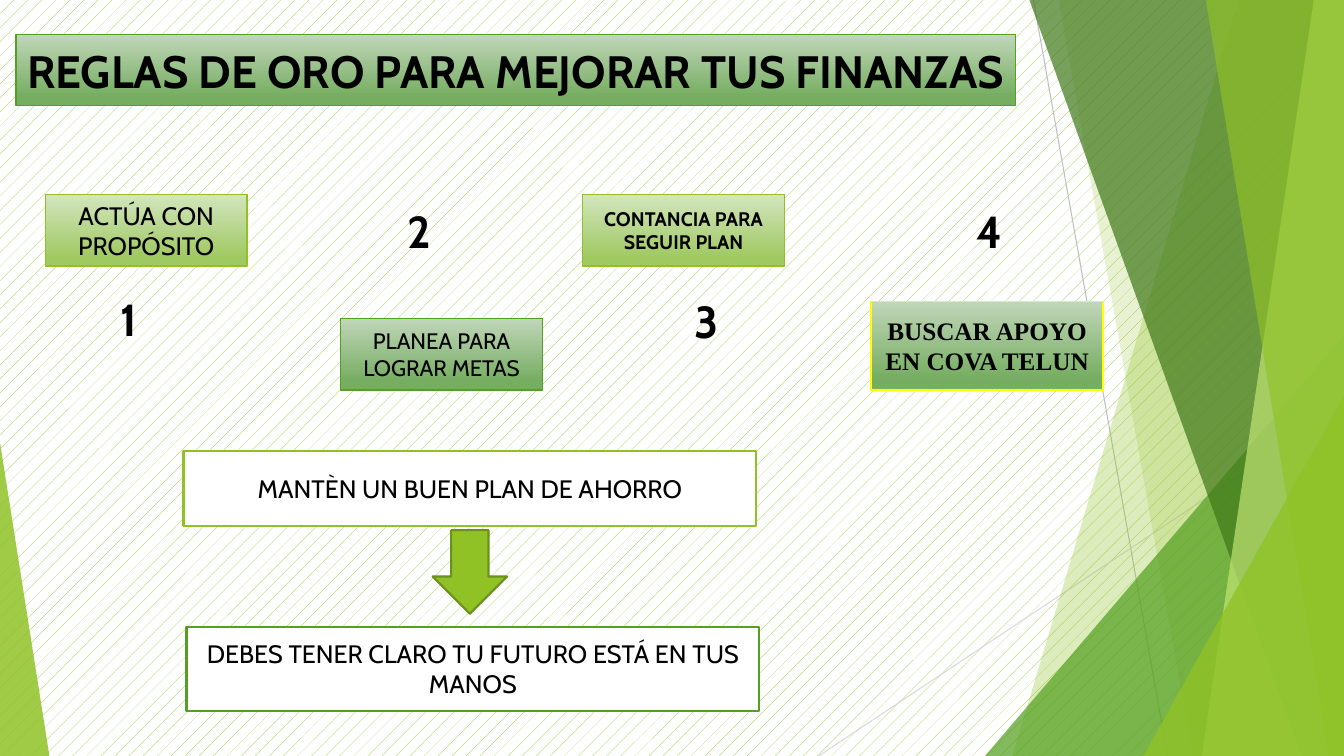
from dataclasses import dataclass

from lxml.etree import SubElement
from pptx import Presentation
from pptx.dml.color import RGBColor
from pptx.enum.dml import MSO_PATTERN
from pptx.enum.shapes import MSO_CONNECTOR, MSO_SHAPE
from pptx.enum.text import MSO_ANCHOR, PP_ALIGN
from pptx.oxml.ns import qn
from pptx.util import Inches, Pt


@dataclass(frozen=True)
class Theme:
    lime: str = "90C226"
    green: str = "54A021"
    forest: str = "3F7819"
    pale: str = "C0E474"
    olive: str = "6B901C"
    yellow: str = "FFFF00"
    white: str = "FFFFFF"
    black: str = "000000"
    silver: str = "BFBFBF"
    mist: str = "D9D9D9"
    lime_fade: tuple = ("D3E5BE", "A0C962")
    green_fade: tuple = ("C0D6B9", "76AD61")
    font: str = "Cabin"
    serif: str = "Times New Roman"
    title: float = 32.4
    number: int = 32
    body: int = 18
    medium: int = 16
    small: int = 14


THEME = Theme()


@dataclass(frozen=True)
class Box:
    left: float
    top: float
    width: float
    height: float

    def inner(self, left, top, width, height):
        return Box(self.left + left, self.top + top, width, height)

    def lengths(self):
        return [Inches(value) for value in (self.left, self.top, self.width, self.height)]


def color(value):
    return RGBColor.from_string(value)


def set_values(target, values):
    for name, value in values.items():
        setattr(target, name, value)


def paint(shape, fill, line=None, weight=1, opacity=100):
    shape.shadow.inherit = False
    if isinstance(fill, tuple):
        shape.fill.gradient()
        shape.fill.gradient_angle = 270
        for stop, shade, position in zip(shape.fill.gradient_stops, fill, (0, 0.88)):
            stop.color.rgb = color(shade)
            stop.position = position
    else:
        shape.fill.solid()
        shape.fill.fore_color.rgb = color(fill)
    if opacity < 100:
        tint = shape.fill._xPr.find(qn("a:solidFill"))[0]
        SubElement(tint, qn("a:alpha")).set("val", str(opacity * 1000))
    if line:
        shape.line.color.rgb = color(line)
        shape.line.width = Pt(weight)
    else:
        shape.line.fill.background()


def write(shape, text, size=THEME.body, bold=False, font=THEME.font, margin=0.1):
    frame = shape.text_frame
    set_values(frame, {
        "word_wrap": True,
        "vertical_anchor": MSO_ANCHOR.MIDDLE,
        "margin_left": Inches(margin),
        "margin_right": Inches(margin),
    })
    para = frame.paragraphs[0]
    para.alignment = PP_ALIGN.CENTER
    span = para.add_run()
    span.text = text
    set_values(span.font, {"name": font, "size": Pt(size), "bold": bold})
    span.font.color.rgb = color(THEME.black)


def add_panel(page, box, text, fill, line, weight=1, **style):
    panel = page.shapes.add_shape(MSO_SHAPE.RECTANGLE, *box.lengths())
    paint(panel, fill, line, weight)
    write(panel, text, **style)


def add_ray(page, start, end, shade):
    points = [Inches(value) for value in (*start, *end)]
    ray = page.shapes.add_connector(MSO_CONNECTOR.STRAIGHT, *points)
    ray.line.color.rgb = color(shade)
    ray.line.width = Pt(0.75)
    SubElement(ray._element.spPr, qn("a:effectLst"))


def add_band(page, box, top_left, bottom_left, shade, opacity):
    right, bottom = box.left + box.width, box.top + box.height
    corners = [(top_left, box.top), (right, box.top), (right, bottom), (bottom_left, bottom)]
    points = [(Inches(x), Inches(y)) for x, y in corners]
    builder = page.shapes.build_freeform(*points[0], scale=1.0)
    builder.add_line_segments(points[1:], close=True)
    paint(builder.convert_to_shape(), shade, opacity=opacity)


def add_corner(page, box, width, height, apex, shade, opacity):
    left = box.left + (box.width - width) * apex
    place = Box(left, box.top + box.height - height, width, height)
    corner = page.shapes.add_shape(MSO_SHAPE.ISOSCELES_TRIANGLE, *place.lengths())
    corner.adjustments[0] = apex
    paint(corner, shade, opacity=opacity)


def add_backdrop(page, box):
    fill = page.background.fill
    fill.patterned()
    fill.pattern = MSO_PATTERN.PERCENT_5
    fill.fore_color.rgb = color(THEME.lime)
    fill.back_color.rgb = color(THEME.white)

    right, bottom = box.left + box.width, box.top + box.height
    add_ray(page, (right - 3.08, box.top), (right - 1.75, bottom), THEME.silver)
    add_ray(page, (right, box.top + 4.03), (right - 5.21, bottom), THEME.mist)
    facets = [
        (add_band, right - 1.05, right - 3.29, THEME.lime, 30),
        (add_band, right - 2.83, right - 1.5, THEME.lime, 20),
        (add_corner, 3.56, 4.17, 1, THEME.green, 72),
        (add_band, right - 3.12, right - 0.42, THEME.forest, 70),
        (add_band, right - 0.3, right - 1.41, THEME.pale, 70),
        (add_band, right - 1.37, right - 0.15, THEME.lime, 65),
        (add_corner, 1.99, 3.57, 1, THEME.lime, 80),
        (add_corner, 0.49, 3.11, 0, THEME.lime, 85),
    ]
    for add_facet, *values in facets:
        add_facet(page, box, *values)


def add_rules(page, box):
    lime = (THEME.lime_fade, THEME.lime)
    green = (THEME.green_fade, THEME.green)
    highlight = (THEME.green_fade, THEME.yellow)
    rules = [
        ((0, 0, 2, 0.71), "ACTÚA CON PROPÓSITO", lime, {}),
        ((2.93, 1.23, 2, 0.71), "PLANEA PARA LOGRAR METAS", green, {"size": THEME.medium}),
        ((5.33, 0, 2, 0.71), "CONTANCIA PARA SEGUIR PLAN", lime,
         {"size": THEME.small, "bold": True}),
        ((8.19, 1.06, 2.3, 0.88), "BUSCAR APOYO EN COVA TELUN", highlight,
         {"bold": True, "font": THEME.serif}),
    ]
    for place, text, colors, style in rules:
        add_panel(page, box.inner(*place), text, *colors, **style)

    numbers = [(0.17, 0.88), (3.05, 0), (5.9, 0.9), (8.7, 0)]
    for number, (left, top) in enumerate(numbers, start=1):
        label = page.shapes.add_textbox(*box.inner(left, top, 1.32, 0.71).lengths())
        write(label, str(number), THEME.number, bold=True)


def add_outcome(page, box):
    add_panel(page, box.inner(0.03, 1.75, 5.68, 0.83),
              "DEBES TENER CLARO TU FUTURO ESTÁ EN TUS MANOS",
              THEME.white, THEME.green, 1.5)
    add_panel(page, box.inner(0, 0, 5.68, 0.75), "MANTÈN UN BUEN PLAN DE AHORRO",
              THEME.white, THEME.lime, 1.5)
    arrow = page.shapes.add_shape(MSO_SHAPE.DOWN_ARROW,
                                  *box.inner(2.47, 0.79, 0.74, 0.83).lengths())
    paint(arrow, THEME.lime, THEME.olive, 1.5)


def main():
    deck = Presentation()
    deck.slide_width, deck.slide_height = Inches(13.33), Inches(7.5)
    page = deck.slides.add_slide(deck.slide_layouts[6])
    add_backdrop(page, Box(0, 0, 13.33, 7.5))
    add_panel(page, Box(0.16, 0.34, 9.91, 0.71), "REGLAS DE ORO PARA MEJORAR TUS FINANZAS",
              THEME.green_fade, THEME.green, size=THEME.title, bold=True, margin=0.05)
    add_rules(page, Box(0.45, 1.93, 10.49, 1.94))
    add_outcome(page, Box(1.82, 4.47, 5.71, 2.58))
    deck.save("out.pptx")


if __name__ == "__main__":
    main()
